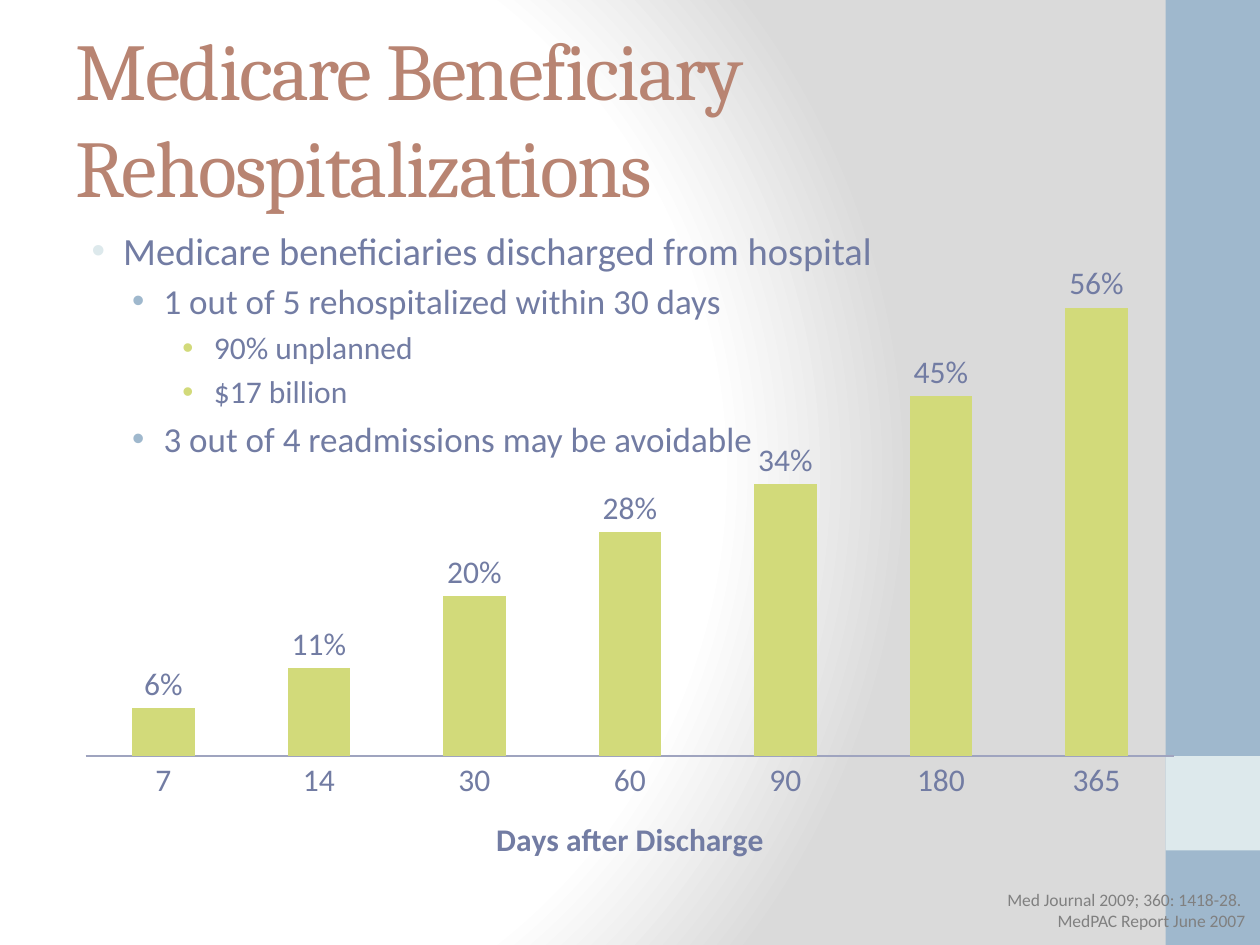
"""Build the slide on Medicare beneficiary rehospitalizations."""
from dataclasses import dataclass

from pptx import Presentation
from pptx.chart.data import CategoryChartData
from pptx.dml.color import RGBColor
from pptx.enum.chart import XL_CHART_TYPE, XL_LABEL_POSITION, XL_TICK_MARK
from pptx.enum.shapes import MSO_SHAPE
from pptx.enum.text import MSO_ANCHOR, MSO_AUTO_SIZE, PP_ALIGN
from pptx.oxml import parse_xml
from pptx.oxml.ns import nsdecls
from pptx.util import Inches, Pt

COLUMN = XL_CHART_TYPE.COLUMN_CLUSTERED
OUTSIDE = XL_LABEL_POSITION.OUTSIDE_END
NO_TICK = XL_TICK_MARK.NONE
RECTANGLE = MSO_SHAPE.RECTANGLE
MIDDLE = MSO_ANCHOR.MIDDLE
NO_FIT = MSO_AUTO_SIZE.NONE
LEFT, RIGHT = PP_ALIGN.LEFT, PP_ALIGN.RIGHT


@dataclass(frozen=True)
class Theme:
    """Colours, fonts and type sizes of the slide."""
    heading_font: str = "Cambria"
    body_font: str = "Calibri"
    heading: str = "B88472"
    body: str = "727CA3"
    source: str = "808080"
    axis: str = "9FA4BF"
    band: str = "9FB8CD"
    pale: str = "DDE9EC"
    bar: str = "D2DA7A"
    white: str = "FFFFFF"
    grey: str = "DADADA"
    heading_size: int = 46
    level_sizes: tuple = (22, 20, 18)
    chart_size: int = 18
    source_size: int = 10


THEME = Theme()
WIDTH, HEIGHT = 10, 7.5
MARGIN = 0.5
TEXT_WIDTH = 8.33
BAND = 0.75
LEVEL_INDENTS = (0.38, 0.7, 1.1)
BULLET_HANG = 0.25
BULLET_COLORS = (THEME.pale, THEME.band, THEME.bar)
POINTS = (
    (0, "Medicare beneficiaries discharged from hospital"),
    (1, "1 out of 5 rehospitalized within 30 days"),
    (2, "90% unplanned"),
    (2, "$17 billion"),
    (1, "3 out of 4 readmissions may be avoidable"),
)
SOURCES = ("Med Journal 2009; 360: 1418-28. ", "MedPAC Report June 2007")
RATES = {"7": 0.06, "14": 0.11, "30": 0.2, "60": 0.28,
         "90": 0.34, "180": 0.45, "365": 0.56}


def box(*lengths):
    """Turn left, top, width and height in inches into lengths."""
    return [Inches(length) for length in lengths]


def style_font(font, size, color, name=THEME.body_font):
    """Set the size, colour and typeface of a font."""
    font.size = Pt(size)
    font.name = name
    font.color.rgb = RGBColor.from_string(color)


def add_run(paragraph, text, *style):
    """Add one styled run to a paragraph."""
    run = paragraph.add_run()
    run.text = text
    style_font(run.font, *style)
    return run


def set_background(slide):
    """Fill the background with a radial gradient."""
    stops = ((0, THEME.white), (75, THEME.white), (100, THEME.grey))
    stop_xml = "".join(
        f'<a:gs pos="{share * 1000}"><a:srgbClr val="{color}"/></a:gs>'
        for share, color in stops)
    slide.element.cSld.insert(0, parse_xml(
        f'<p:bg {nsdecls("p", "a")}><p:bgPr><a:gradFill rotWithShape="1">'
        f'<a:gsLst>{stop_xml}</a:gsLst><a:path path="circle">'
        '<a:fillToRect l="20000" t="50000" r="100000" b="50000"/></a:path>'
        '</a:gradFill><a:effectLst/></p:bgPr></p:bg>'))


def add_block(slide, top, height, color):
    """Add a plain block to the band at the right edge."""
    block = slide.shapes.add_shape(
        RECTANGLE, *box(WIDTH - BAND, top, BAND, height))
    block.shadow.inherit = False
    block.fill.solid()
    block.fill.fore_color.rgb = RGBColor.from_string(color)
    block.line.fill.background()


def set_title(slide, text):
    """Place and format the title."""
    title = slide.shapes.title
    title.left, title.top, title.width, title.height = box(
        MARGIN, 0.3, TEXT_WIDTH, 1.25)
    frame = title.text_frame
    frame.word_wrap = True
    frame.auto_size = NO_FIT
    frame.vertical_anchor = MIDDLE
    paragraph = frame.paragraphs[0]
    paragraph.alignment = LEFT
    run = add_run(paragraph, text, THEME.heading_size, THEME.heading,
                  THEME.heading_font)
    run.font._element.set("spc", "-100")


def add_paragraphs(slide, lengths, count):
    """Add a wrapping text box and return its paragraphs."""
    frame = slide.shapes.add_textbox(*box(*lengths)).text_frame
    frame.word_wrap = True
    for _ in range(count - 1):
        frame.add_paragraph()
    return frame.paragraphs


def set_bullet(paragraph, level):
    """Give a paragraph the indent and bullet of its level."""
    paragraph.level = level
    properties = paragraph._p.get_or_add_pPr()
    properties.set("marL", str(Inches(LEVEL_INDENTS[level])))
    properties.set("indent", str(-Inches(BULLET_HANG)))
    for content in (
            f'<a:buClr {nsdecls("a")}><a:srgbClr '
            f'val="{BULLET_COLORS[level]}"/></a:buClr>',
            f'<a:buFont {nsdecls("a")} typeface="Arial"/>',
            f'<a:buChar {nsdecls("a")} char="•"/>'):
        properties.append(parse_xml(content))


def add_points(slide):
    """Add the bulleted points."""
    paragraphs = add_paragraphs(
        slide, (MARGIN, 1.75, TEXT_WIDTH, 5.25), len(POINTS))
    for paragraph, (level, text) in zip(paragraphs, POINTS):
        size = THEME.level_sizes[level]
        paragraph.space_before = Pt(0.2 * size)
        set_bullet(paragraph, level)
        add_run(paragraph, text, size, THEME.body)


def add_sources(slide):
    """Add the right-aligned source lines."""
    paragraphs = add_paragraphs(slide, (7.31, 7.01, 2.67, 0.44), len(SOURCES))
    for paragraph, text in zip(paragraphs, SOURCES):
        paragraph.alignment = RIGHT
        add_run(paragraph, text, THEME.source_size, THEME.source)


def set_plot_layout(chart, **shares):
    """Fix the inner plot area as shares of the chart."""
    modes = "".join(f'<c:{axis}Mode val="edge"/>' for axis in "xy")
    sides = "".join(f'<c:{side} val="{share}"/>'
                    for side, share in shares.items())
    plot_area = chart._chartSpace.chart.plotArea
    for layout in plot_area.findall(
            "{http://schemas.openxmlformats.org/drawingml/2006/chart}layout"):
        plot_area.remove(layout)
    plot_area.insert(0, parse_xml(
        f'<c:layout {nsdecls("c")}><c:manualLayout>'
        f'<c:layoutTarget val="inner"/>{modes}{sides}'
        '</c:manualLayout></c:layout>'))


def add_rate_chart(slide):
    """Add the column chart of rehospitalization rates."""
    data = CategoryChartData(number_format="0%")
    data.categories = list(RATES)
    data.add_series("Series 1", list(RATES.values()))
    chart = slide.shapes.add_chart(
        COLUMN, *box(MARGIN, 2.09, 9, 4.95), data).chart
    style_font(chart.font, THEME.chart_size, THEME.body)
    chart.has_legend = chart.has_title = False
    days, rates = chart.category_axis, chart.value_axis
    days.major_tick_mark = days.minor_tick_mark = NO_TICK
    days.format.line.color.rgb = RGBColor.from_string(THEME.axis)
    run = add_run(days.axis_title.text_frame.paragraphs[0],
                  "Days after Discharge", THEME.chart_size, THEME.body)
    run.font.bold = True
    rates.visible = rates.has_major_gridlines = False
    rates.minimum_scale, rates.maximum_scale = 0, 0.6
    plot = chart.plots[0]
    plot.gap_width, plot.overlap = 150, -25
    plot.vary_by_categories = False
    fill = plot.series[0].format.fill
    fill.solid()
    fill.fore_color.rgb = RGBColor.from_string(THEME.bar)
    plot.has_data_labels = True
    labels = plot.data_labels
    labels.show_value = True
    labels.position = OUTSIDE
    labels.number_format, labels.number_format_is_linked = "0%", False
    style_font(labels.font, THEME.chart_size, THEME.body)
    set_plot_layout(chart, x=0.02, y=0.02, w=0.96, h=0.77)


def main():
    """Build and save the presentation."""
    presentation = Presentation()
    presentation.slide_width, presentation.slide_height = box(WIDTH, HEIGHT)
    slide = presentation.slides.add_slide(presentation.slide_layouts[5])
    set_background(slide)
    add_block(slide, 0, HEIGHT, THEME.band)
    add_block(slide, HEIGHT - 2 * BAND, BAND, THEME.pale)
    set_title(slide, "Medicare Beneficiary Rehospitalizations")
    add_points(slide)
    add_sources(slide)
    add_rate_chart(slide)
    presentation.save("out.pptx")


if __name__ == "__main__":
    main()
